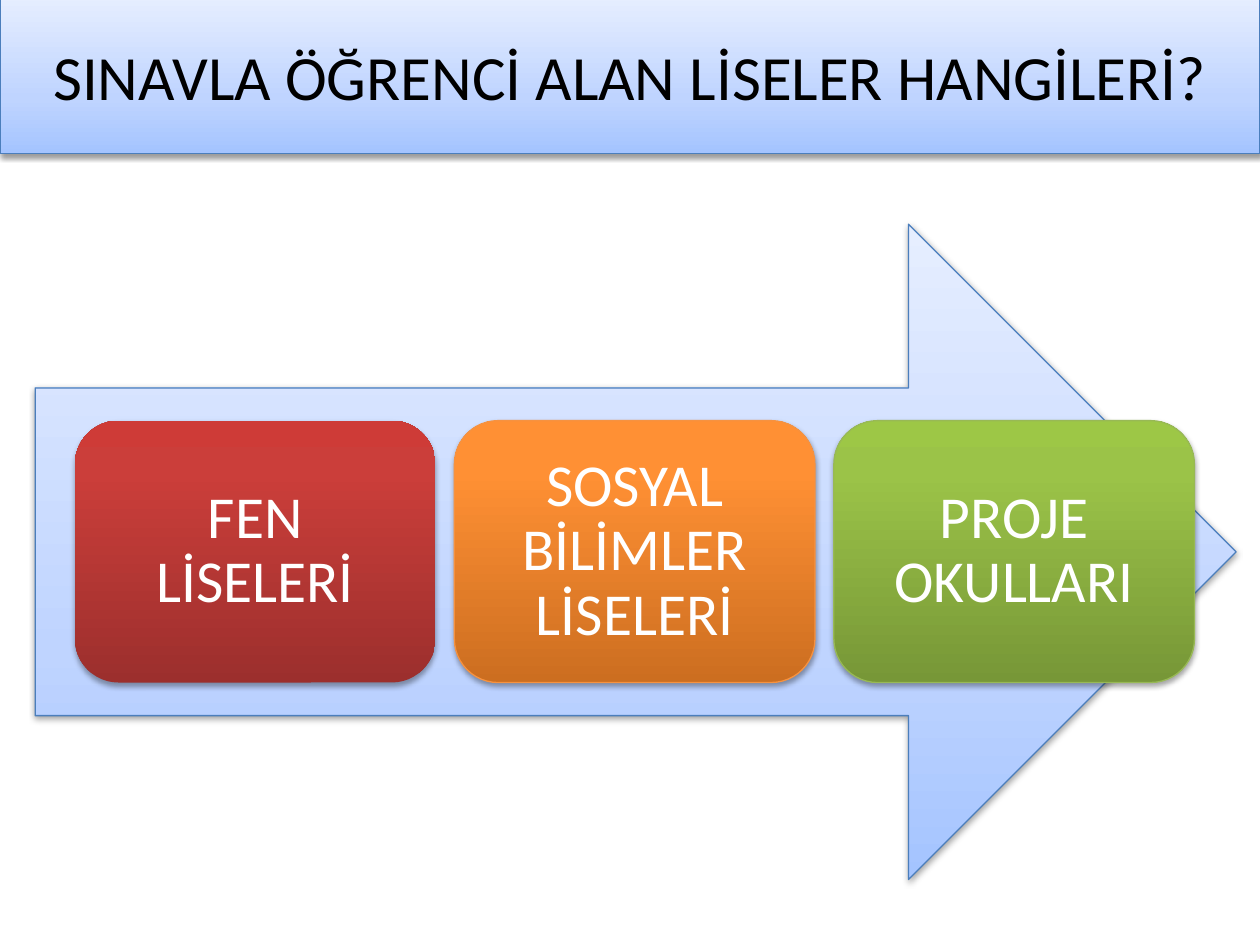
from lxml.etree import SubElement
from pptx import Presentation
from pptx.dml.color import RGBColor
from pptx.enum.shapes import MSO_SHAPE as Shape
from pptx.enum.text import MSO_ANCHOR as Anchor, MSO_AUTO_SIZE as AutoSize, PP_ALIGN as Align
from pptx.oxml.ns import qn
from pptx.util import Cm, Pt

COLORS = {
    "text": "000000",
    "card_text": "FFFFFF",
    "shadow": "000000",
    "blue_line": "4B7EBC",
    "orange_line": "F69240",
    "green_line": "98B955",
}
# Gradient stops run from bottom to top: (position in percent, colour).
GRADIENTS = {
    "blue": [(0, "A4C4FF"), (35, "BFD4FF"), (100, "E6EEFF")],
    "red": [(0, "9C2F2D"), (80, "CB3E3A"), (100, "CE3B37")],
    "orange": [(0, "CC6E20"), (80, "FF9034"), (100, "FF9136")],
    "green": [(0, "779737"), (80, "9BC348"), (100, "9DC746")],
}
CARDS = [
    ("FEN LİSELERİ", "red", None),
    ("SOSYAL BİLİMLER LİSELERİ", "orange", "orange_line"),
    ("PROJE OKULLARI", "green", "green_line"),
]
CARD_LEFT, CARD_TOP, CARD_WIDTH, CARD_HEIGHT, CARD_STEP = 1.51, 8.48, 7.27, 5.28, 7.65


def place(shape, left, top, width, height):
    shape.left, shape.top = Cm(left), Cm(top)
    shape.width, shape.height = Cm(width), Cm(height)


def add_color(parent, color, alpha=None):
    element = SubElement(parent, qn("a:srgbClr"), val=color)
    if alpha is not None:
        SubElement(element, qn("a:alpha"), val=str(alpha * 1000))


def set_gradient(shape, stops):
    shape.fill.gradient()
    shape.fill.gradient_angle = 90
    stop_list = shape._element.spPr.find(".//" + qn("a:gsLst"))
    for stop in list(stop_list):
        stop_list.remove(stop)
    for position, color in stops:
        add_color(SubElement(stop_list, qn("a:gs"), pos=str(position * 1000)), color)


def set_shadow(shape, alpha, distance):
    shape.shadow.inherit = False
    effects = shape._element.spPr.find(qn("a:effectLst"))
    shadow = SubElement(effects, qn("a:outerShdw"), blurRad=str(Pt(3.1)),
                        dist=str(Pt(distance)), dir="5400000", rotWithShape="0")
    add_color(shadow, COLORS["shadow"], alpha)


def style(shape, gradient, line=None, shadow_alpha=38, shadow_distance=1.6):
    set_gradient(shape, GRADIENTS[gradient])
    if line:
        shape.line.color.rgb = RGBColor.from_string(COLORS[line])
        shape.line.width = Pt(0.75)
    else:
        shape.line.fill.background()
    set_shadow(shape, shadow_alpha, shadow_distance)


def set_text(shape, text, size, color, inset=None, line_spacing=None):
    frame = shape.text_frame
    frame.word_wrap = True
    frame.auto_size = AutoSize.NONE
    frame.vertical_anchor = Anchor.MIDDLE
    if inset is not None:
        frame.margin_left = frame.margin_right = Cm(inset)
        frame.margin_top = frame.margin_bottom = Cm(inset)
    paragraph = frame.paragraphs[0]
    paragraph.alignment = Align.CENTER
    if line_spacing:
        paragraph.line_spacing = line_spacing
    run = paragraph.add_run()
    run.text = text
    run.font.name = "Calibri"
    run.font.size = Pt(size)
    run.font.color.rgb = RGBColor.from_string(COLORS[color])


def add_title(slide, text):
    title = slide.shapes.title
    place(title, 0, -0.08, 25.4, 3.18)
    style(title, "blue", "blue_line")
    set_text(title, text, 36, "text")


def add_arrow(slide):
    arrow = slide.shapes.add_shape(Shape.RIGHT_ARROW, Cm(0.71), Cm(4.52), Cm(24.21), Cm(13.21))
    style(arrow, "blue", "blue_line")


def add_card(slide, index, text, gradient, line):
    card = slide.shapes.add_shape(
        Shape.ROUNDED_RECTANGLE, Cm(CARD_LEFT + index * CARD_STEP), Cm(CARD_TOP),
        Cm(CARD_WIDTH), Cm(CARD_HEIGHT))
    style(card, gradient, line, shadow_alpha=35, shadow_distance=1.8)
    set_text(card, text, 34, "card_text", inset=0.36, line_spacing=0.9)


def main():
    presentation = Presentation()
    presentation.slide_width, presentation.slide_height = Cm(25.4), Cm(19.05)
    slide = presentation.slides.add_slide(presentation.slide_layouts[5])
    add_title(slide, "SINAVLA ÖĞRENCİ ALAN LİSELER HANGİLERİ?")
    add_arrow(slide)
    for index, card in enumerate(CARDS):
        add_card(slide, index, *card)
    presentation.save("out.pptx")


if __name__ == "__main__":
    main()
